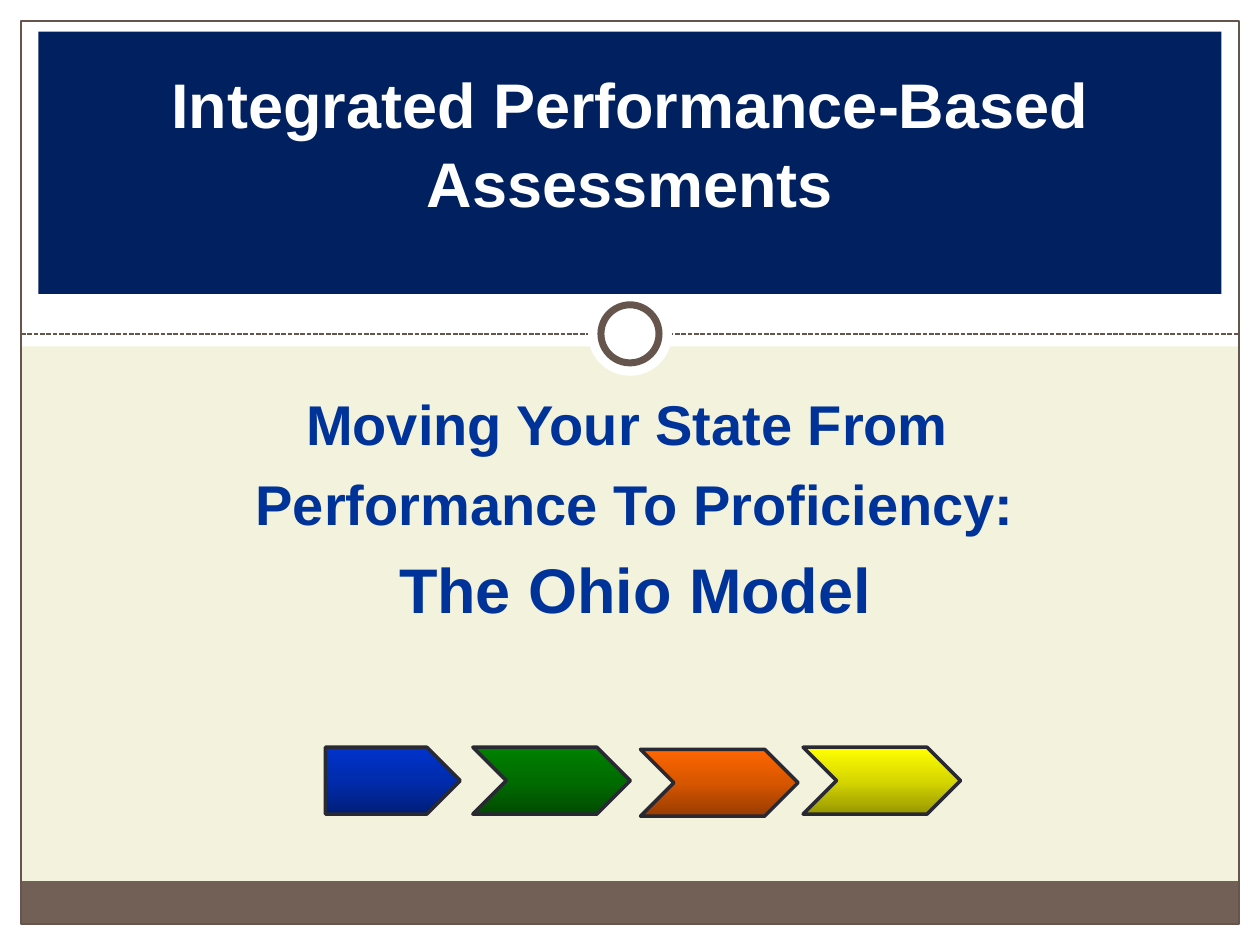
from copy import deepcopy

from lxml import etree
from pptx import Presentation
from pptx.dml.color import RGBColor
from pptx.enum import dml, shapes, text
from pptx.oxml.ns import qn
from pptx.util import Pt

FONT = "Arial"
CREAM = RGBColor(0xF3, 0xF2, 0xDC)
WHITE = RGBColor(0xFF, 0xFF, 0xFF)
BROWN = RGBColor(0x72, 0x60, 0x56)
DARK_BROWN = RGBColor(0x65, 0x55, 0x4C)
NAVY = RGBColor(0x00, 0x20, 0x60)
BLUE = RGBColor(0x00, 0x33, 0x99)
OUTLINE = RGBColor(0x29, 0x29, 0x34)
# Each arrow's gradient runs from bottom to top.
ARROW_COLORS = [
    [RGBColor(0x00, 0x1E, 0x79), RGBColor(0x00, 0x2B, 0xAC), RGBColor(0x00, 0x33, 0xCC)],
    [RGBColor(0x00, 0x4C, 0x00), RGBColor(0x00, 0x6C, 0x00), RGBColor(0x00, 0x80, 0x00)],
    [RGBColor(0x97, 0x3C, 0x00), RGBColor(0xD7, 0x56, 0x00), RGBColor(0xFF, 0x66, 0x00)],
    [RGBColor(0x97, 0x97, 0x00), RGBColor(0xD7, 0xD7, 0x00), RGBColor(0xFF, 0xFF, 0x00)],
]
Kind = shapes.MSO_SHAPE


def add_shape(page, kind, left, top, width, height, fill=None, line=None, weight=0.75):
    shape = page.shapes.add_shape(kind, Pt(left), Pt(top), Pt(width), Pt(height))
    shape.shadow.inherit = False
    if fill is None:
        shape.fill.background()
    else:
        shape.fill.solid()
        shape.fill.fore_color.rgb = fill
    if line is None:
        shape.line.fill.background()
    else:
        shape.line.color.rgb = line
        shape.line.width = Pt(weight)
    return shape


def add_frame(page, width, height, margin=12, header=198, rule_y=190.8):
    """White margins and header, brown footer, dashed rule and ring."""
    for box in [(0, height - margin, width, margin), (width - margin, 0, margin, height),
                (0, 0, margin, height), (0, 0, width, header)]:
        add_shape(page, Kind.RECTANGLE, *box, fill=WHITE)
    inner = width - 2 * margin
    footer = 24.5
    add_shape(page, Kind.RECTANGLE, margin, height - margin - footer, inner, footer, BROWN)
    rule = page.shapes.add_connector(shapes.MSO_CONNECTOR.STRAIGHT, Pt(margin), Pt(rule_y),
                                     Pt(width - margin), Pt(rule_y))
    rule.line.color.rgb = DARK_BROWN
    rule.line.width = Pt(0.9)
    rule.line.dash_style = dml.MSO_LINE.SQUARE_DOT
    etree.SubElement(rule._element.spPr, qn("a:effectLst"))
    add_shape(page, Kind.RECTANGLE, margin, margin, inner, height - 2 * margin, line=DARK_BROWN)
    for size, line in [(48, None), (33.2, DARK_BROWN)]:
        add_shape(page, Kind.OVAL, (width - size) / 2, rule_y - size / 2, size, size,
                  WHITE, line, 4)


def fill_placeholder(page, holder, box, lines, color, top_inset, bottom_inset, anchor):
    """Place a placeholder in front and fill it with (words, size, space before) lines."""
    page.shapes._spTree.append(holder._element)
    holder.left, holder.top, holder.width, holder.height = map(Pt, box)
    frame = holder.text_frame
    frame.text = "\n".join(words for words, _, _ in lines)
    frame.auto_size = text.MSO_AUTO_SIZE.NONE
    frame.word_wrap = True
    frame.vertical_anchor = anchor
    frame.margin_top, frame.margin_bottom = Pt(top_inset), Pt(bottom_inset)
    for para, (_, size, space) in zip(frame.paragraphs, lines):
        para.alignment = text.PP_ALIGN.CENTER
        para.space_before = Pt(space)
        for span in para.runs:
            span.font.name = FONT
            span.font.size = Pt(size)
            span.font.bold = True
            span.font.color.rgb = color


def add_title(page, box):
    title = page.shapes.title
    fill_placeholder(page, title, box, [("Integrated Performance-Based Assessments", 36, 0)],
                     WHITE, 3.6, 42, text.MSO_ANCHOR.BOTTOM)
    title.text_frame.paragraphs[0].line_spacing = 1.05
    title.fill.solid()
    title.fill.fore_color.rgb = NAVY


def add_subtitle(page, box):
    lines = [("Moving Your State From ", 32, 0),
             ("Performance To Proficiency:", 32, 7.5),
             ("The Ohio Model", 36, 7.5)]
    fill_placeholder(page, page.placeholders[1], box, lines, BLUE, 6.5, 3.6,
                     text.MSO_ANCHOR.TOP)


def set_gradient(shape, colors):
    fill = shape.fill
    fill.gradient()
    fill.gradient_angle = 90
    first = fill._fill._gradFill.gsLst[0]
    first.addnext(deepcopy(first))
    for stop, color, position in zip(fill.gradient_stops, colors, (0, 0.5, 1)):
        stop.color.rgb = color
        stop.position = position


def add_arrows(page, left, top, height=38.2):
    """A starting pentagon followed by chevrons, at offsets from left and top."""
    places = [(0, 0, 77), (84.2, 0, 90), (180, 1.2, 90), (272.9, 0, 90)]
    for index, ((x, y, width), colors) in enumerate(zip(places, ARROW_COLORS)):
        kind = Kind.CHEVRON if index else Kind.PENTAGON
        arrow = add_shape(page, kind, left + x, top + y, width, height, line=OUTLINE, weight=2)
        set_gradient(arrow, colors)


def main():
    deck = Presentation()
    deck.slide_width, deck.slide_height = Pt(720), Pt(540)
    page = deck.slides.add_slide(deck.slide_layouts[0])
    page.background.fill.solid()
    page.background.fill.fore_color.rgb = CREAM
    add_frame(page, 720, 540)
    add_title(page, (22, 18, 676, 150))
    add_subtitle(page, (24, 216, 678, 168))
    add_arrows(page, 186, 427)
    deck.save("out.pptx")


if __name__ == "__main__":
    main()
